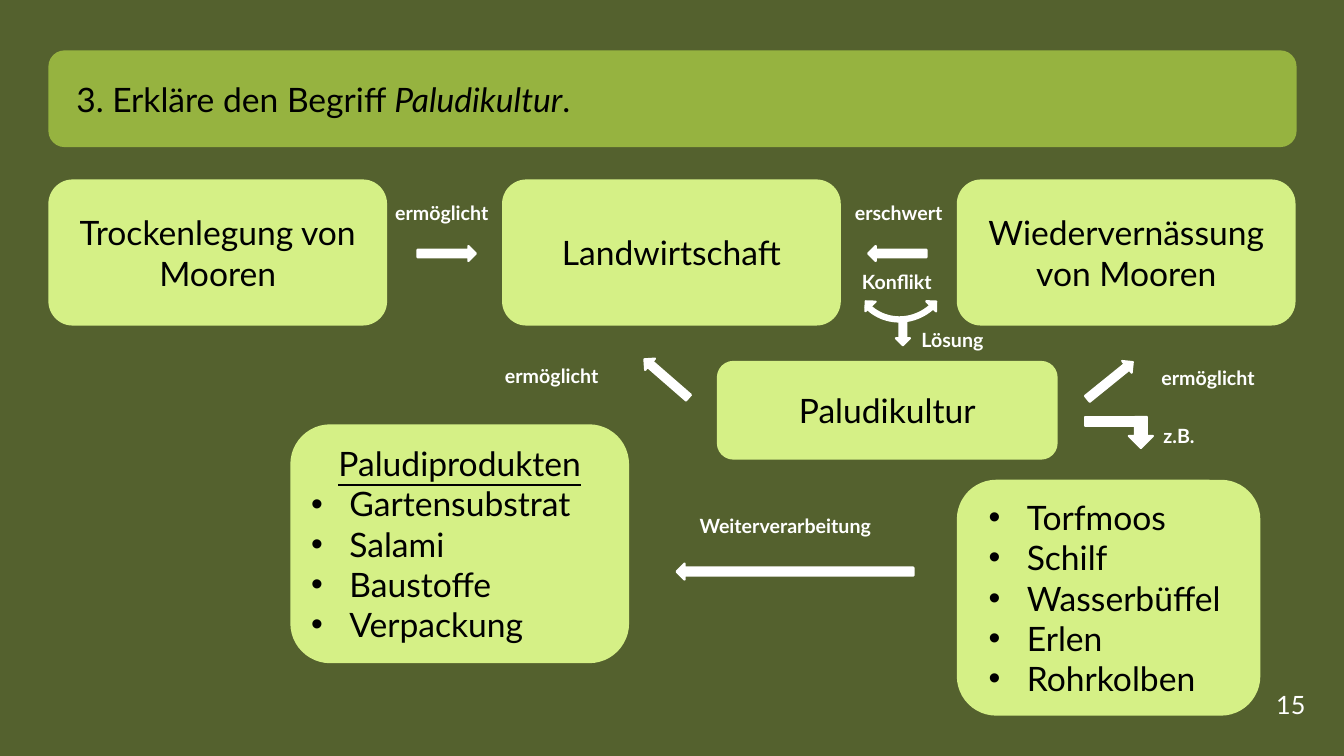
import collections
import dataclasses

import lxml.etree
import pptx
import pptx.dml.color
import pptx.enum.shapes
import pptx.enum.text
import pptx.oxml.ns
import pptx.util

PX = 9144
SHAPE = pptx.enum.shapes.MSO_SHAPE
ALIGN = pptx.enum.text.PP_ALIGN
ANCHOR = pptx.enum.text.MSO_ANCHOR


@dataclasses.dataclass(frozen=True)
class Theme:
    """Colours, font and sizes of the slide."""
    background: str = "54612E"
    title_bar: str = "96B340"
    card: str = "D5F086"
    dark: str = "000000"
    light: str = "FFFFFF"
    font: str = "Lato"
    body_size: int = 24
    number_size: int = 18
    label_size: int = 14
    arrow_line: float = 1.5
    arc_line: float = 4.5
    corner: float = 0.167


THEME = Theme()


class Box(collections.namedtuple("Box", "left top width height")):
    """A rectangle in px."""

    def inside(self, left, top, width, height):
        """Return a box placed relative to this one."""
        return Box(self.left + left, self.top + top, width, height)

    def emu(self):
        """Return the four lengths in EMU."""
        return [pptx.util.Emu(length * PX) for length in self]


def rgb(colour):
    """Turn a hex string into a colour."""
    return pptx.dml.color.RGBColor.from_string(colour)


def style_run(run, size, colour, bold=False):
    """Set the font of a run."""
    run.font.name = THEME.font
    run.font.size = pptx.util.Pt(size)
    run.font.color.rgb = rgb(colour)
    run.font.bold = bold


def add_bullet(paragraph):
    """Give a paragraph a hanging bullet."""
    properties = paragraph._p.get_or_add_pPr()
    properties.set("marL", str(38 * PX))
    properties.set("indent", str(-38 * PX))
    font = lxml.etree.SubElement(properties, pptx.oxml.ns.qn("a:buFont"))
    font.set("typeface", "Arial")
    bullet = lxml.etree.SubElement(properties, pptx.oxml.ns.qn("a:buChar"))
    bullet.set("char", "•")


def add_solid(slide, kind, box, fill, line=None, rotation=0):
    """Add a filled preset shape."""
    shape = slide.shapes.add_shape(kind, *box.emu())
    shape.shadow.inherit = False
    shape.rotation = rotation
    shape.fill.solid()
    shape.fill.fore_color.rgb = rgb(fill)
    if line:
        shape.line.color.rgb = rgb(line)
        shape.line.width = pptx.util.Pt(THEME.arrow_line)
    else:
        shape.line.fill.background()
    return shape


def add_mark(slide, box, rotation=0, kind=SHAPE.RIGHT_ARROW):
    """Add a white arrow or part of one."""
    return add_solid(slide, kind, box, THEME.light, THEME.light, rotation)


def add_label(slide, box, text, size=THEME.label_size, bold=True):
    """Add a white one-line label."""
    text_frame = slide.shapes.add_textbox(*box.emu()).text_frame
    text_frame.word_wrap = True
    text_frame.text = text
    style_run(text_frame.paragraphs[0].runs[0], size, THEME.light, bold)


def add_card(slide, box, text="", bullets=(), inset=20, fill=THEME.card):
    """Add a rounded card with a centred heading, bullets or both."""
    shape = add_solid(slide, SHAPE.ROUNDED_RECTANGLE, box, fill)
    shape.adjustments[0] = THEME.corner
    text_frame = shape.text_frame
    text_frame.word_wrap = True
    text_frame.vertical_anchor = ANCHOR.MIDDLE
    margin = inset - round(box.height * THEME.corner * 0.29)
    text_frame.margin_left = text_frame.margin_right = pptx.util.Emu(margin * PX)
    text_frame.margin_top = text_frame.margin_bottom = 0
    headings = [text] if text else []
    text_frame.text = "\n".join(headings + list(bullets))
    for index, paragraph in enumerate(text_frame.paragraphs):
        paragraph.alignment = ALIGN.CENTER
        if index >= len(headings):
            paragraph.alignment = ALIGN.LEFT
            add_bullet(paragraph)
        for run in paragraph.runs:
            style_run(run, THEME.body_size, THEME.dark)
    return text_frame


def draw_title(slide, box):
    """Draw the title bar with the term in italics."""
    text_frame = add_card(slide, box, "3. Erkläre\u00a0den Begriff ", inset=28, fill=THEME.title_bar)
    paragraph = text_frame.paragraphs[0]
    paragraph.alignment = ALIGN.LEFT
    for text, italic in (("Paludikultur", True), (".", False)):
        run = paragraph.add_run()
        run.text = text
        style_run(run, THEME.body_size, THEME.dark)
        run.font.italic = italic


def draw_land_use(slide, box):
    """Draw the top row of three cards and the arrows between them."""
    card_width = 336
    pitch = (box.width - card_width) / 2
    names = ("Trockenlegung von Mooren", "Landwirtschaft", "Wiedervernässung von Mooren")
    for index, name in enumerate(names):
        add_card(slide, box.inside(round(index * pitch), 0, card_width, box.height), name)
    add_mark(slide, box.inside(366, 66, 58, 15))
    add_label(slide, box.inside(334, 16, 123, 34), "ermöglicht")
    add_mark(slide, box.inside(813, 66, 58, 15), 180)
    add_label(slide, box.inside(790, 16, 133, 34), "erschwert")


def draw_conflict(slide, box):
    """Draw the curved double arrow that leads to the solution."""
    arc = slide.shapes.add_shape(SHAPE.ARC, *box.inside(2, 0, 94, 90).emu())
    arc.shadow.inherit = False
    arc.rotation = 137
    arc.fill.background()
    arc.line.color.rgb = rgb(THEME.light)
    arc.line.width = pptx.util.Pt(THEME.arc_line)
    for left, rotation in ((9, 317), (74, 46)):
        add_mark(slide, box.inside(left, 72, 14, 7), rotation, SHAPE.ISOSCELES_TRIANGLE)
    add_mark(slide, box.inside(38, 97, 25, 14), 90)
    add_label(slide, box.inside(0, 37, 99, 34), "Konflikt")
    add_label(slide, box.inside(59, 94, 99, 34), "Lösung")


def draw_paludiculture(slide, box):
    """Draw the central card and its outgoing arrows."""
    add_card(slide, box, "Paludikultur")
    add_mark(slide, box.inside(-79, 10, 58, 15), 221)
    add_label(slide, box.inside(-220, -2, 133, 34), "ermöglicht")
    add_mark(slide, box.inside(361, 12, 58, 15), 321)
    add_label(slide, box.inside(431, 0, 133, 34), "ermöglicht")
    add_mark(slide, box.inside(365, 56, 56, 9), kind=SHAPE.RECTANGLE)
    add_mark(slide, box.inside(405, 59, 31, 24), 90)
    add_label(slide, box.inside(433, 58, 133, 34), "z.B.")


def draw_processing(slide, box):
    """Draw the products, the crops and the arrow between them."""
    products = ("Gartensubstrat", "Salami", "Baustoffe", "Verpackung")
    crops = ("Torfmoos", "Schilf", "Wasserbüffel", "Erlen", "Rohrkolben")
    text_frame = add_card(slide, box.inside(0, 0, 336, 237), "Paludiprodukten", products)
    text_frame.paragraphs[0].runs[0].font.underline = True
    add_card(slide, box.inside(661, 55, 301, 234), bullets=crops, inset=31)
    add_mark(slide, box.inside(383, 138, 235, 16), 180)
    add_label(slide, box.inside(396, 84, 210, 34), "Weiterverarbeitung")


def main():
    """Build the slide and save it."""
    presentation = pptx.Presentation()
    presentation.slide_width = pptx.util.Emu(1333 * PX)
    presentation.slide_height = pptx.util.Emu(750 * PX)
    slide = presentation.slides.add_slide(presentation.slide_layouts[6])
    slide.background.fill.solid()
    slide.background.fill.fore_color.rgb = rgb(THEME.background)
    draw_title(slide, Box(48, 50, 1238, 96))
    draw_land_use(slide, Box(48, 178, 1237, 145))
    draw_conflict(slide, Box(845, 226, 158, 128))
    draw_paludiculture(slide, Box(711, 358, 338, 98))
    draw_processing(slide, Box(288, 421, 962, 289))
    add_label(slide, Box(1256, 679, 54, 40), "15", THEME.number_size, False)
    presentation.save("out.pptx")


if __name__ == "__main__":
    main()
